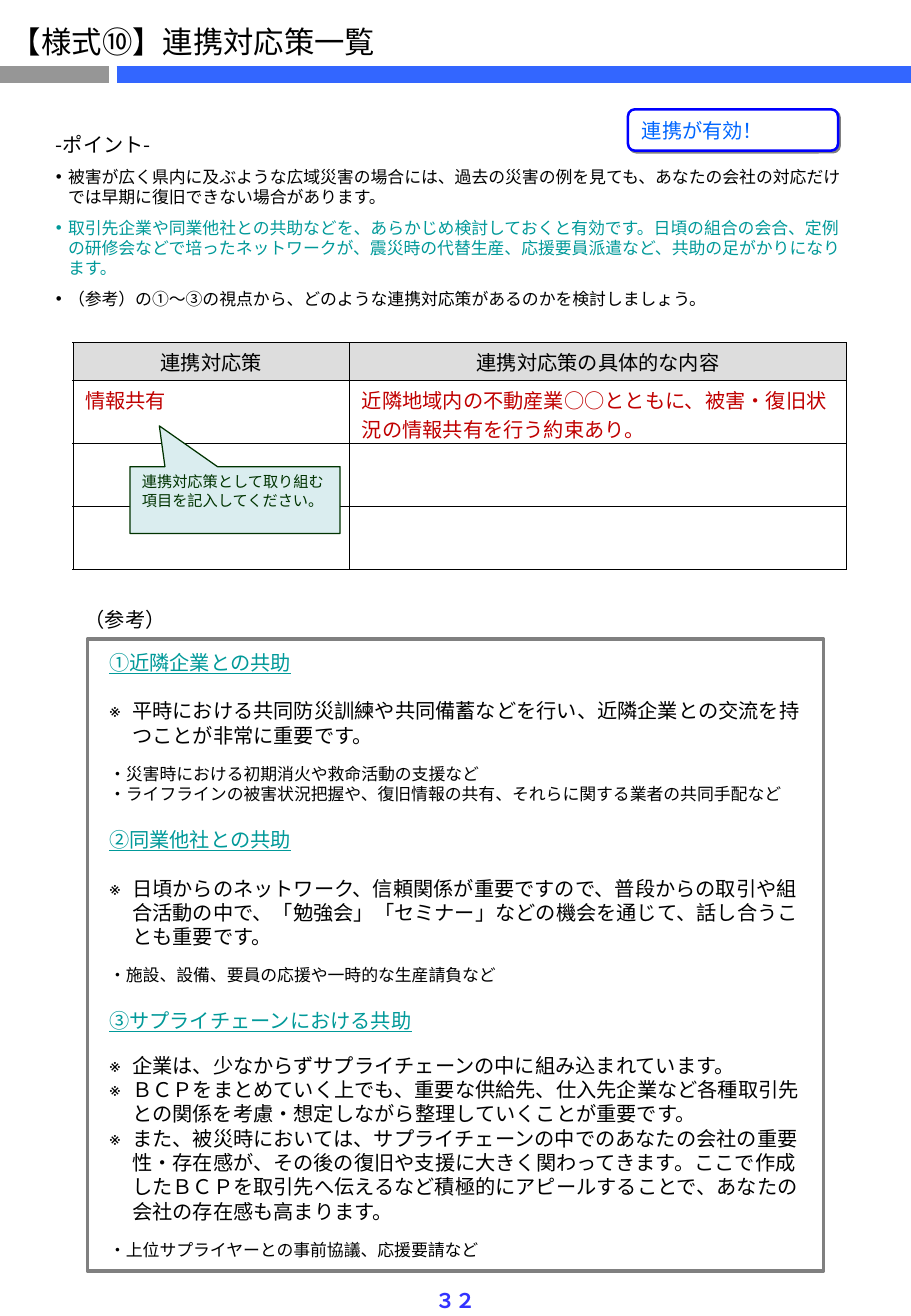
from lxml import etree
from pptx import Presentation
from pptx.dml.color import RGBColor
from pptx.enum import shapes, text
from pptx.oxml import ns
from pptx.util import Inches, Pt

GOTHIC = "Noto Sans CJK JP"
BLACK, TEAL, RED = "000000", "009999", "C00000"
LEADING = 1.2  # line pitch as a multiple of the type size

TITLE = "【様式⑩】連携対応策一覧"
POINT_HEAD = "-ポイント-"
POINTS = [
    ("被害が広く県内に及ぶような広域災害の場合には、過去の災害の例を見ても、あなたの会社の対応だけでは早期に復旧できない場合があります。", BLACK),
    ("取引先企業や同業他社との共助などを、あらかじめ検討しておくと有効です。日頃の組合の会合、定例の研修会などで培ったネットワークが、震災時の代替生産、応援要員派遣など、共助の足がかりになります。", TEAL),
    ("（参考）の①～③の視点から、どのような連携対応策があるのかを検討しましょう。", BLACK),
]
MEASURES = [
    ("連携対応策", "連携対応策の具体的な内容"),
    ("情報共有", "近隣地域内の不動産業○○とともに、被害・復旧状況の情報共有を行う約束あり。"),
    ("", ""),
    ("", ""),
]
COLUMN_WIDTHS = [2.28, 4.09]
ROW_HEIGHTS = [0.31, 0.52, 0.52, 0.52]
# top, height, heading, gap below heading (pt), notes, examples
REFERENCES = [
    (5.3, 1.38, "①近隣企業との共助", 14.4,
     ["平時における共同防災訓練や共同備蓄などを行い、近隣企業との交流を持つことが非常に重要です。"],
     ["・災害時における初期消火や救命活動の支援など",
      "・ライフラインの被害状況把握や、復旧情報の共有、それらに関する業者の共同手配など"]),
    (6.76, 1.41, "②同業他社との共助", 14.4,
     ["日頃からのネットワーク、信頼関係が重要ですので、普段からの取引や組合活動の中で、「勉強会」「セミナー」などの機会を通じて、話し合うことも重要です。"],
     ["・施設、設備、要員の応援や一時的な生産請負など"]),
    (8.25, 2.19, "③サプライチェーンにおける共助", 12,
     ["企業は、少なからずサプライチェーンの中に組み込まれています。",
      "ＢＣＰをまとめていく上でも、重要な供給先、仕入先企業など各種取引先との関係を考慮・想定しながら整理していくことが重要です。",
      "また、被災時においては、サプライチェーンの中でのあなたの会社の重要性・存在感が、その後の復旧や支援に大きく関わってきます。ここで作成したＢＣＰを取引先へ伝えるなど積極的にアピールすることで、あなたの会社の存在感も高まります。"],
     ["・上位サプライヤーとの事前協議、応援要請など"]),
]


def rgb(value):
    return RGBColor.from_string(value)


def child(parent, tag, **attributes):
    return etree.SubElement(parent, ns.qn(tag), attributes)


def box(left, top, width, height):
    return [Inches(v) for v in (left, top, width, height)]


def write(paragraph, words, size, color=BLACK, font=GOTHIC, bullet=None, indent=0,
          before=0, after=0, leading=LEADING, align=text.PP_ALIGN.LEFT,
          bold=False, underline=False):
    paragraph.text = words
    props = paragraph._p.get_or_add_pPr()
    props.set("marL", str(Inches(indent)))
    props.set("indent", str(-Inches(indent)))
    if bullet:
        child(props, "a:buFont", typeface="Arial")
        child(props, "a:buChar", char=bullet)
    else:
        child(props, "a:buNone")
    paragraph.alignment = align
    paragraph.line_spacing = Pt(size * leading)
    paragraph.space_before, paragraph.space_after = Pt(before), Pt(after)
    style = paragraph.font
    style.size, style.bold, style.underline = Pt(size), bold, underline
    style.color.rgb = rgb(color)
    style.name = font
    child(style._element, "a:ea", typeface=GOTHIC)


def write_all(frame, lines):
    for i, (words, size, options) in enumerate(lines):
        write(frame.paragraphs[0] if i == 0 else frame.add_paragraph(), words, size, **options)


def prepare(frame, anchor=text.MSO_ANCHOR.TOP, wrap=True):
    frame.auto_size = text.MSO_AUTO_SIZE.NONE
    frame.word_wrap, frame.vertical_anchor = wrap, anchor
    return frame


def place(shape, left, top, width, height):
    shape.left, shape.top, shape.width, shape.height = box(left, top, width, height)


def add_box(kind, position, line, weight, fill=None):
    shape = slide.shapes.add_shape(kind, *box(*position))
    shape.shadow.inherit = False
    if fill:
        shape.fill.solid()
        shape.fill.fore_color.rgb = rgb(fill)
    else:
        shape.fill.background()
    shape.line.color.rgb, shape.line.width = rgb(line), Pt(weight)
    return shape


def border(cell):
    props = cell._tc.get_or_add_tcPr()
    for i, side in enumerate(("a:lnL", "a:lnR", "a:lnT", "a:lnB")):
        edge = etree.Element(ns.qn(side), w=str(Pt(0.5)))
        child(child(edge, "a:solidFill"), "a:srgbClr", val=BLACK)
        props.insert(i, edge)


deck = Presentation()
deck.slide_width, deck.slide_height = Inches(7.5), Inches(10.83)
slide = deck.slides.add_slide(deck.slide_layouts[1])
title, points = slide.placeholders

# Title and the two-part rule below it
place(title, -0.01, 0.14, 3.6, 0.4)
write(prepare(title.text_frame, text.MSO_ANCHOR.MIDDLE, False).paragraphs[0], TITLE, 18)
for start, end, color in [(0, 0.9, "969696"), (0.96, 7.5, "3366FF")]:
    rule = slide.shapes.add_connector(shapes.MSO_CONNECTOR.STRAIGHT, Inches(start),
                                      Inches(0.61), Inches(end), Inches(0.61))
    rule.line.color.rgb, rule.line.width = rgb(color), Pt(10)
    child(rule._element.spPr, "a:effectLst")

# Points
place(points, 0.36, 1.04, 6.77, 1.57)
write_all(prepare(points.text_frame),
          [(POINT_HEAD, 12, dict(indent=0.1, after=6))]
          + [(words, 10, dict(color=color, bullet="•", indent=0.1, after=6))
             for words, color in POINTS])

# Three reference sections
for top, height, heading, gap, notes, examples in REFERENCES:
    section = slide.shapes.add_textbox(*box(0.8, top, 5.9, height))
    lines = [(heading, 12, dict(color=TEAL, underline=True, indent=0.19))]
    lines += [(note, 12, dict(bullet="※", indent=0.19, before=0 if i else gap))
              for i, note in enumerate(notes)]
    lines += [(example, 10, dict(indent=0.19, before=0 if i else 9.6))
              for i, example in enumerate(examples)]
    write_all(prepare(section.text_frame), lines)

# Table of measures
measures = slide.shapes.add_table(len(MEASURES), len(COLUMN_WIDTHS),
                                  *box(0.6, 2.82, sum(COLUMN_WIDTHS), sum(ROW_HEIGHTS))).table
for column, width in zip(measures.columns, COLUMN_WIDTHS):
    column.width = Inches(width)
for r, (row, height) in enumerate(zip(MEASURES, ROW_HEIGHTS)):
    measures.rows[r].height = Inches(height)
    for c, words in enumerate(row):
        cell = measures.cell(r, c)
        cell.margin_top, cell.margin_bottom = Inches(0.04), 0
        if r == 0:
            cell.fill.solid()
            cell.fill.fore_color.rgb = rgb("DDDDDD")
            cell.vertical_anchor = text.MSO_ANCHOR.MIDDLE
            write(cell.text_frame.paragraphs[0], words, 12, align=text.PP_ALIGN.CENTER)
        else:
            cell.fill.background()
            if words:
                write(cell.text_frame.paragraphs[0], words, 12, RED, "Arial", leading=1.43)
        border(cell)

# Page number and reference label
page = slide.shapes.add_textbox(*box(3.48, 10.55, 0.54, 0.31))
write(prepare(page.text_frame, wrap=False).paragraphs[0], "３２", 12, "3333FF",
      align=text.PP_ALIGN.CENTER, bold=True)
label = slide.shapes.add_textbox(*box(0.6, 4.94, 0.87, 0.31))
write(prepare(label.text_frame, text.MSO_ANCHOR.MIDDLE, False).paragraphs[0], "（参考）", 12)

# Badge with a hard shadow
badge = add_box(shapes.MSO_SHAPE.ROUNDED_RECTANGLE, (5.17, 0.9, 1.73, 0.34), "0000FF", 1.5, "FFFFFF")
shadow = child(badge._element.spPr.find(ns.qn("a:effectLst")), "a:outerShdw",
               dist=str(Pt(1.4)), dir="2700000", algn="ctr", rotWithShape="0")
child(shadow, "a:srgbClr", val="808080")
write(prepare(badge.text_frame, text.MSO_ANCHOR.MIDDLE).paragraphs[0], "連携が有効！", 12, "0066FF")

# Frame around the references, and the callout on the table
add_box(shapes.MSO_SHAPE.RECTANGLE, (0.72, 5.26, 6.06, 5.2), "808080", 2.25)
hint = add_box(shapes.MSO_SHAPE.RECTANGULAR_CALLOUT, (1.07, 3.84, 1.73, 0.55), "003300", 0.75, "DAEDEF")
hint.adjustments[0], hint.adjustments[1] = -0.36, -1.11
write(prepare(hint.text_frame).paragraphs[0], "連携対応策として取り組む項目を記入してください。", 9, "003300")

deck.save("out.pptx")
